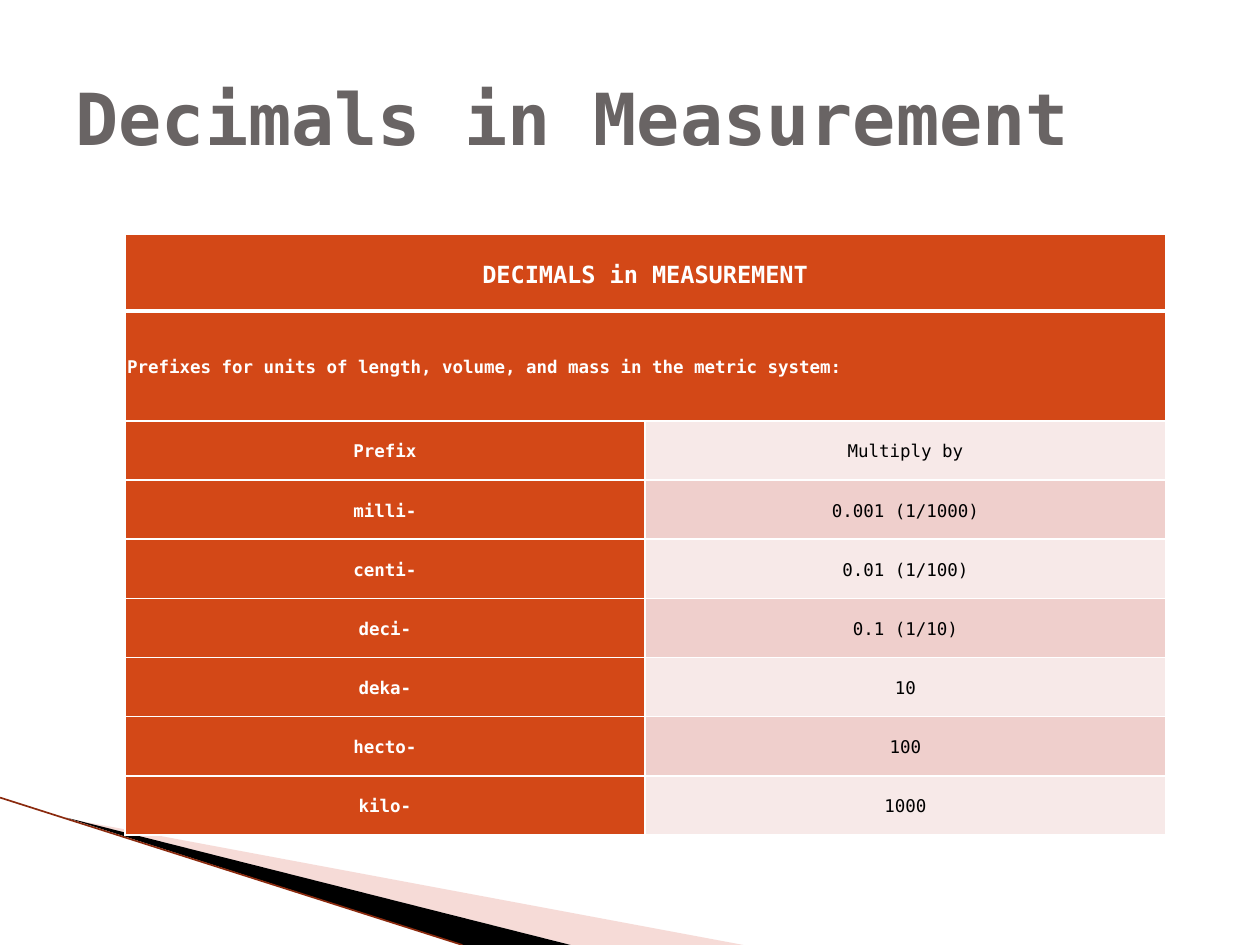
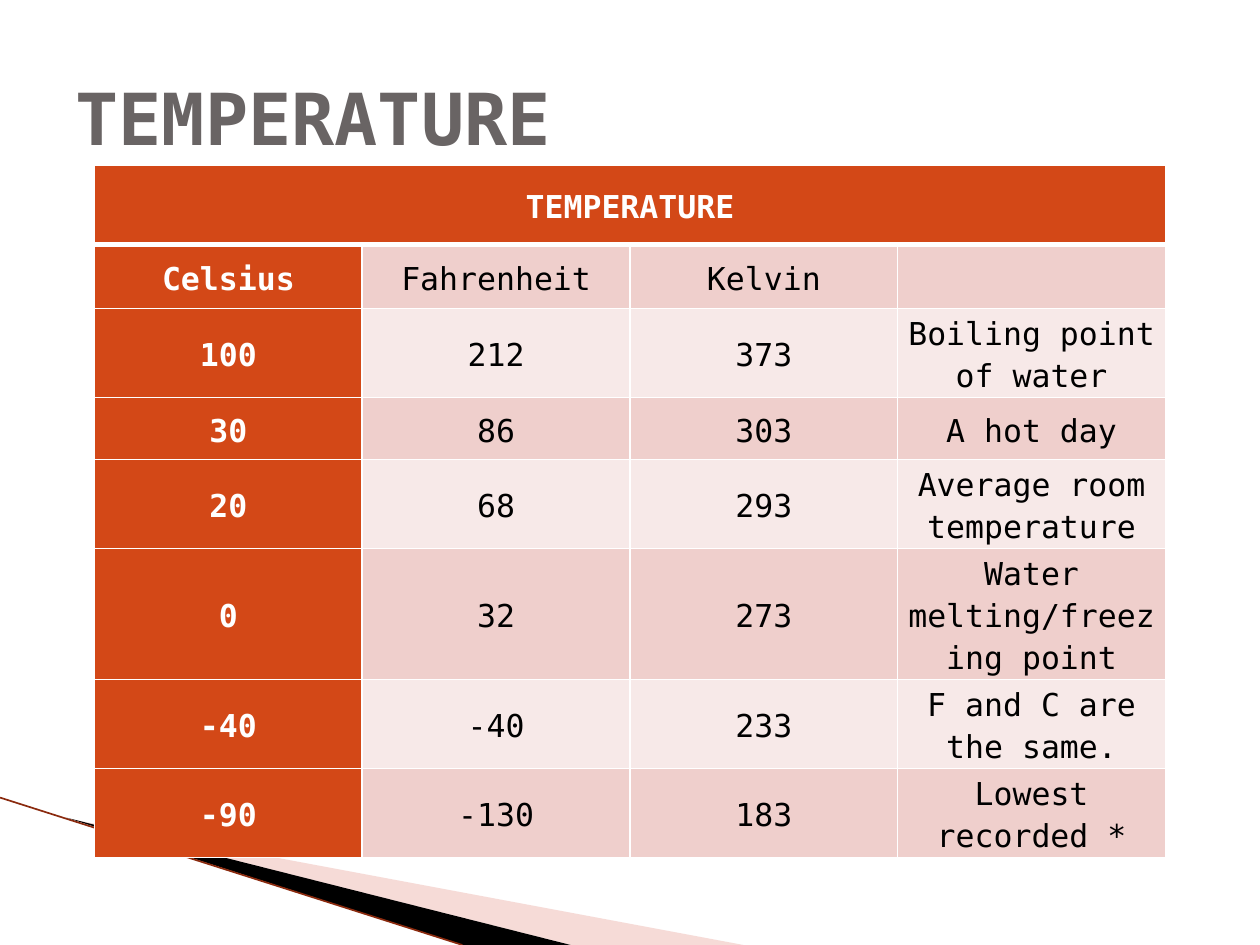
"""Build two slides with tables on decimal prefixes and temperature scales."""
from lxml import etree
from pptx import Presentation
from pptx import util as u
from pptx.dml.color import RGBColor
from pptx.enum import shapes, text
from pptx.oxml.ns import qn

ORANGE = RGBColor(0xD3, 0x48, 0x17)
LIGHT_BAND = RGBColor(0xF7, 0xE9, 0xE8)
DARK_BAND = RGBColor(0xEF, 0xCF, 0xCC)
SWOOSH_PINK = RGBColor(0xE9, 0xA5, 0x9D)
SWOOSH_EDGE = RGBColor(0x8A, 0x2A, 0x0E)
GREY = RGBColor(0x69, 0x64, 0x64)
BLACK = RGBColor(0, 0, 0)
WHITE = RGBColor(255, 255, 255)
FONT = "DejaVu Sans Mono"

SWOOSHES = [
    (SWOOSH_PINK, 40, [(0.55, 6.5), (5.9, 7.5), (4.53, 7.5)]),
    (BLACK, 100, [(0.53, 6.49), (4.53, 7.5), (3.67, 7.5)]),
]

PREFIXES = [
    ["DECIMALS in MEASUREMENT"],
    ["Prefixes for units of length, volume, and mass in the metric system:"],
    ["Prefix", "Multiply by"],
    ["milli-", "0.001 (1/1000)"],
    ["centi-", "0.01 (1/100)"],
    ["deci-", "0.1 (1/10)"],
    ["deka-", "10"],
    ["hecto-", "100"],
    ["kilo-", "1000"],
]
TEMPERATURES = [
    ["TEMPERATURE"],
    ["Celsius", "Fahrenheit", "Kelvin", ""],
    ["100", "212", "373", "Boiling point of water"],
    ["30", "86", "303", "A hot day"],
    ["20", "68", "293", "Average room temperature"],
    ["0", "32", "273", "Water melting/freezing point"],
    ["-40", "-40", "233", "F and C are the same."],
    ["-90", "-130", "183", "Lowest recorded *"],
]
SLIDES = [
    ("Decimals in Measurement", PREFIXES, 0.99, 1.86, 8.26,
     [0.61, 0.87] + [0.47] * 7, 13.5, 10),
    ("TEMPERATURE", TEMPERATURES, 0.75, 1.31, 8.5,
     [0.63, 0.51, 0.69, 0.49, 0.69, 1, 0.69, 0.69], 18, 18),
]


def style_font(font, size, color, bold):
    font.name, font.size, font.bold = FONT, u.Pt(size), bold
    font.color.rgb = color


def add_borders(cell, widths):
    properties = cell._tc.get_or_add_tcPr()
    for place, (side, points) in enumerate(widths.items()):
        line = etree.Element(qn(f"a:ln{side}"), w=str(u.Pt(points)))
        solid = etree.SubElement(line, qn("a:solidFill"))
        etree.SubElement(solid, qn("a:srgbClr"), val=str(WHITE))
        properties.insert(place, line)


prs = Presentation()
prs.slide_width, prs.slide_height = u.Inches(10), u.Inches(7.5)

for heading, rows, left, top, width, heights, head_size, body_size in SLIDES:
    slide = prs.slides.add_slide(prs.slide_layouts[5])
    title = slide.shapes.title
    title.left, title.top = u.Inches(0.5), u.Inches(0.3)
    title.width, title.height = u.Inches(9), u.Inches(1.25)
    title.text_frame.text = heading
    title.text_frame.vertical_anchor = text.MSO_ANCHOR.MIDDLE
    title.text_frame.paragraphs[0].alignment = text.PP_ALIGN.LEFT
    style_font(title.text_frame.paragraphs[0].font, 41, GREY, True)

    for color, opacity, corners in SWOOSHES:
        start, *others = [(u.Inches(x), u.Inches(y)) for x, y in corners]
        builder = slide.shapes.build_freeform(*start)
        builder.add_line_segments(others)
        swoosh = builder.convert_to_shape()
        swoosh.shadow.inherit = False
        swoosh.fill.solid()
        swoosh.fill.fore_color.rgb = color
        swoosh.line.fill.background()
        if opacity < 100:
            tint = swoosh.fill._xPr.find(".//" + qn("a:srgbClr"))
            etree.SubElement(tint, qn("a:alpha"), val=str(opacity * 1000))

    edge = slide.shapes.add_connector(
        shapes.MSO_CONNECTOR.STRAIGHT, 0, u.Inches(6.33), u.Inches(3.67), u.Inches(7.5))
    edge.line.color.rgb, edge.line.width = SWOOSH_EDGE, u.Pt(0.95)
    etree.SubElement(edge._element.spPr, qn("a:effectLst"))

    columns = len(rows[-1])
    grid = slide.shapes.add_table(
        len(rows), columns, u.Inches(left), u.Inches(top),
        u.Inches(width), u.Inches(sum(heights))).table
    for r, (entries, height) in enumerate(zip(rows, heights)):
        grid.rows[r].height = u.Inches(height)
        spanning = len(entries) == 1
        if spanning:
            grid.cell(r, 0).merge(grid.cell(r, columns - 1))
        for c in range(columns):
            cell = grid.cell(r, c)
            accent = spanning or c == 0
            band = DARK_BAND if r % 2 else LIGHT_BAND
            cell.fill.solid()
            cell.fill.fore_color.rgb = ORANGE if accent else band
            add_borders(cell, {"L": 1, "R": 1, "T": 3 if r == 1 else 1, "B": 3 if r == 0 else 1})
            cell.margin_left = cell.margin_right = u.Inches(0.02)
            cell.margin_top = cell.margin_bottom = u.Inches(0.02)
            cell.vertical_anchor = text.MSO_ANCHOR.MIDDLE
            if c < len(entries) and entries[c]:
                cell.text = entries[c]
                line = cell.text_frame.paragraphs[0]
                line.line_spacing = 1.15
                left_aligned = spanning and r > 0
                line.alignment = text.PP_ALIGN.LEFT if left_aligned else text.PP_ALIGN.CENTER
                style_font(line.font, body_size if r else head_size,
                           WHITE if accent else BLACK, accent)

prs.save("out.pptx")
